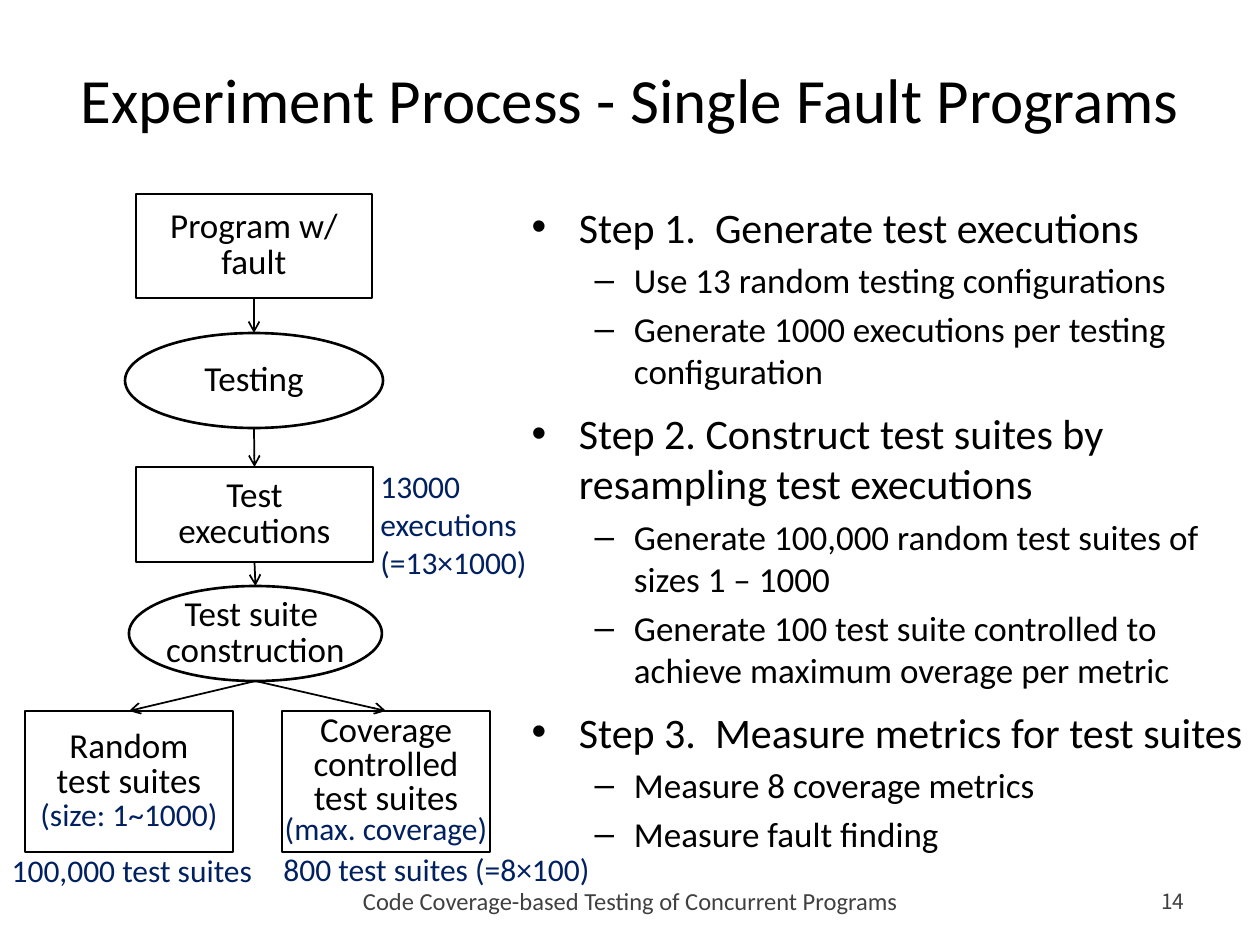
from lxml.etree import SubElement
from pptx import Presentation
from pptx.dml.color import RGBColor
from pptx.enum.shapes import MSO_CONNECTOR, MSO_SHAPE
from pptx.enum.text import MSO_ANCHOR, MSO_AUTO_SIZE, PP_ALIGN
from pptx.oxml.ns import qn
from pptx.util import Inches, Pt

SCALE = 914400 / 126
BLACK, NAVY, GRAY, WHITE = "000000", "002060", "404040", "FFFFFF"
LEFT, MID, RIGHT = PP_ALIGN.LEFT, PP_ALIGN.CENTER, PP_ALIGN.RIGHT

STEPS = [
    ("Step 1.  Generate test executions", [
        "Use 13 random testing configurations",
        "Generate 1000 executions per testing configuration"]),
    ("Step 2. Construct test suites by resampling test executions", [
        "Generate 100,000 random test suites of sizes 1 – 1000",
        "Generate 100 test suite controlled to achieve maximum overage per metric"]),
    ("Step 3.  Measure metrics for test suites", [
        "Measure 8 coverage metrics",
        "Measure fault finding"]),
]


def px(*nums):
    return [round(n * SCALE) for n in nums]


def color(code):
    return RGBColor.from_string(code)


def write(para, text, size=20, ink=BLACK, font="Calibri", align=LEFT,
          level=0, lead=None, before=None):
    para.alignment = align
    para.level = level
    if lead:
        para.line_spacing = lead
    if before:
        para.space_before = Pt(before)
    run = para.add_run()
    run.text = text
    run.font.size = Pt(size)
    run.font.name = font
    run.font.color.rgb = color(ink)


def fill(frame, lines, **form):
    for i, line in enumerate(lines):
        para = frame.paragraphs[0] if i == 0 else frame.add_paragraph()
        text, extra = line if isinstance(line, tuple) else (line, {})
        write(para, text, **{**form, **extra})


def place(holder, box):
    holder.left, holder.top, holder.width, holder.height = px(*box)
    frame = holder.text_frame
    frame.auto_size = MSO_AUTO_SIZE.NONE
    return frame


def node(slide, kind, box, lines, lead=0.85, side=0.1):
    shape = slide.shapes.add_shape(kind, *px(*box))
    shape.shadow.inherit = False
    if kind == MSO_SHAPE.OVAL:
        shape.fill.solid()
        shape.fill.fore_color.rgb = color(WHITE)
    else:
        shape.fill.background()
    shape.line.color.rgb = color(BLACK)
    shape.line.width = Pt(1.5)
    frame = shape.text_frame
    frame.word_wrap = True
    frame.vertical_anchor = MSO_ANCHOR.MIDDLE
    frame.margin_left = frame.margin_right = Inches(side)
    fill(frame, lines, align=MID, lead=lead)
    return shape


def label(slide, box, lines, anchor=MSO_ANCHOR.TOP, **form):
    frame = slide.shapes.add_textbox(*px(*box)).text_frame
    frame.word_wrap = True
    frame.vertical_anchor = anchor
    fill(frame, lines, **form)


def arrow(slide, start, end):
    x = start.left + start.width // 2
    y = start.top + start.height
    line = slide.shapes.add_connector(MSO_CONNECTOR.STRAIGHT, x, y, x, y)
    if start.auto_shape_type == MSO_SHAPE.RECTANGLE:
        line.begin_connect(start, 2)
    line.end_connect(end, 0)
    line.line.color.rgb = color(BLACK)
    line.line.width = Pt(1)
    SubElement(line.line._get_or_add_ln(), qn("a:tailEnd"), type="arrow")
    SubElement(line._element.spPr, qn("a:effectLst"))


def flow(slide):
    rect, oval = MSO_SHAPE.RECTANGLE, MSO_SHAPE.OVAL
    note = {"size": 18, "ink": NAVY}
    program = node(slide, rect, (136, 194, 236, 104), ["Program w/", "fault"])
    testing = node(slide, oval, (125, 333, 258, 95), ["Testing"], side=0)
    runs = node(slide, rect, (136, 467, 237, 95), ["Test", "executions"])
    build = node(slide, oval, (129, 586, 253, 95),
                 ["Test suite ", "construction"], side=0)
    random = node(slide, rect, (25, 711, 208, 141),
                  ["Random", "test suites", ("(size: 1~1000)", note)])
    cover = node(slide, rect, (282, 711, 208, 141),
                 ["Coverage", "controlled", "test suites",
                  ("(max. coverage)", note)], lead=0.8, side=0)
    for start, end in [(program, testing), (testing, runs), (runs, build),
                       (build, random), (build, cover)]:
        arrow(slide, start, end)
    label(slide, (368, 461, 193, 127),
          ["13000", "executions", "(=13×1000)"], **note)
    label(slide, (-8, 845, 280, 50), ["100,000 test suites"], align=MID, **note)
    label(slide, (271, 844, 345, 50), ["800 test suites (=8×100)"], **note)


def main():
    deck = Presentation()
    deck.slide_width, deck.slide_height = px(1260, 945)
    slide = deck.slides.add_slide(deck.slide_layouts[1])

    title = place(slide.shapes.title, (63, 37, 1134, 123))
    title.vertical_anchor = MSO_ANCHOR.MIDDLE
    fill(title, ["Experiment Process - Single Fault Programs"],
         size=36, align=MID)

    items = []
    for i, (head, subs) in enumerate(STEPS):
        items.append((head, {"size": 24, "before": 9 if i else None}))
        items += [(sub, {"level": 1}) for sub in subs]
    fill(place(slide.placeholders[1], (519, 195, 741, 704)), items)

    flow(slide)
    label(slide, (203, 876, 855, 50),
          ["Code Coverage-based Testing of Concurrent Programs"],
          anchor=MSO_ANCHOR.MIDDLE, size=14, ink=GRAY, align=MID)
    label(slide, (1126, 876, 71, 50), ["14"], anchor=MSO_ANCHOR.MIDDLE,
          size=12, ink=GRAY, font="Noto Sans CJK KR", align=RIGHT)
    deck.save("out.pptx")


if __name__ == "__main__":
    main()
